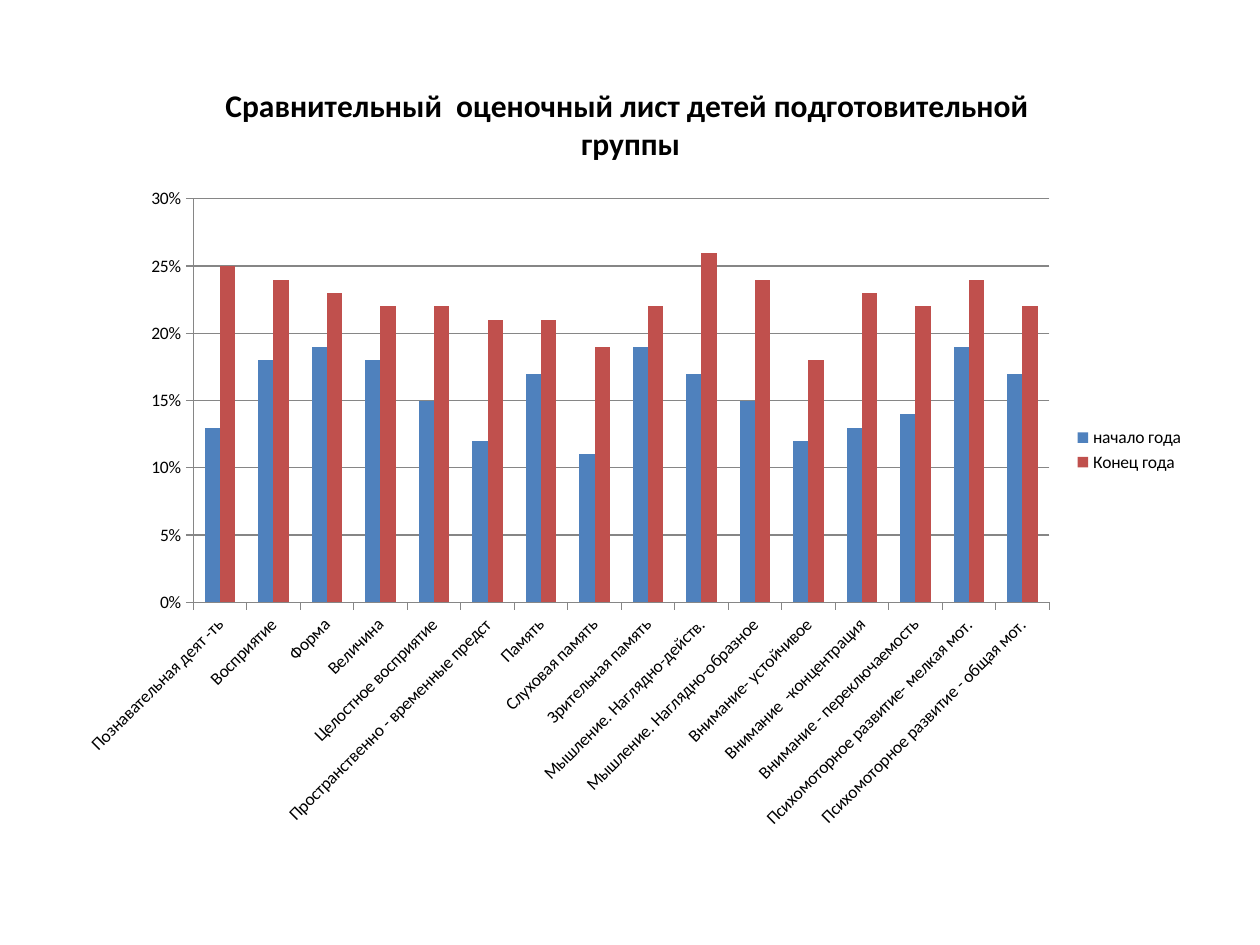
"""Build a slide with a column chart comparing scores at the start and end of the year."""
from pptx import Presentation
from pptx.chart.data import CategoryChartData
from pptx.dml.color import RGBColor
from pptx.enum.chart import XL_CHART_TYPE, XL_LEGEND_POSITION, XL_TICK_MARK
from pptx.util import Cm, Pt

COLUMN = XL_CHART_TYPE.COLUMN_CLUSTERED
RIGHT = XL_LEGEND_POSITION.RIGHT
OUTSIDE = XL_TICK_MARK.OUTSIDE
NO_TICK = XL_TICK_MARK.NONE
BLACK = RGBColor(0x00, 0x00, 0x00)
GREY = RGBColor(0x86, 0x86, 0x86)
BLUE = RGBColor(0x4F, 0x81, 0xBD)
RED = RGBColor(0xC0, 0x50, 0x4D)
FONT = "Calibri"

TITLE = "Сравнительный  оценочный лист детей подготовительной  группы"
SCORES = [
    ("Познавательная деят -ть", 0.13, 0.25),
    ("Восприятие", 0.18, 0.24),
    ("Форма", 0.19, 0.23),
    ("Величина", 0.18, 0.22),
    ("Целостное восприятие", 0.15, 0.22),
    ("Пространственно - временные предст", 0.12, 0.21),
    ("Память", 0.17, 0.21),
    ("Слуховая память", 0.11, 0.19),
    ("Зрительная память", 0.19, 0.22),
    ("Мышление. Наглядно-действ.", 0.17, 0.26),
    ("Мышление. Наглядно-образное", 0.15, 0.24),
    ("Внимание- устойчивое", 0.12, 0.18),
    ("Внимание  -концентрация", 0.13, 0.23),
    ("Внимание - переключаемость", 0.14, 0.22),
    ("Психомоторное развитие- мелкая мот.", 0.19, 0.24),
    ("Психомоторное развитие - общая мот.", 0.17, 0.22),
]

deck = Presentation()
deck.slide_width, deck.slide_height = Cm(25.4), Cm(19.05)
slide = deck.slides.add_slide(deck.slide_layouts[6])

names, start, end = zip(*SCORES)
data = CategoryChartData(number_format="0%")
data.categories = names
data.add_series("начало года", start)
data.add_series("Конец года", end)
frame = slide.shapes.add_chart(COLUMN, Cm(1.3), Cm(1.12), Cm(22.83), Cm(15.9), data)
chart = frame.chart
chart.font.name = FONT
chart.font.size = Pt(10)
chart.font.color.rgb = BLACK

chart.has_title = True
chart.chart_title.include_in_layout = False
run = chart.chart_title.text_frame.paragraphs[0].add_run()
run.text = TITLE
run.font.name = FONT
run.font.size = Pt(18)
run.font.bold = True
run.font.color.rgb = BLACK

chart.has_legend = True
chart.legend.position = RIGHT
chart.legend.include_in_layout = False

plot = chart.plots[0]
plot.gap_width = 150
plot.overlap = 0
plot.vary_by_categories = False
for series, color in zip(plot.series, (BLUE, RED)):
    series.invert_if_negative = False
    series.format.fill.solid()
    series.format.fill.fore_color.rgb = color

scale = chart.value_axis
scale.minimum_scale = 0
scale.maximum_scale = 0.3
scale.major_unit = 0.05
scale.has_major_gridlines = True
scale.tick_labels.number_format = "0%"
scale.tick_labels.number_format_is_linked = False
for axis in (chart.category_axis, scale):
    axis.major_tick_mark = OUTSIDE
    axis.minor_tick_mark = NO_TICK
for part in (chart.category_axis, scale, scale.major_gridlines):
    part.format.line.color.rgb = GREY
    part.format.line.width = Pt(0.75)

deck.save("out.pptx")
